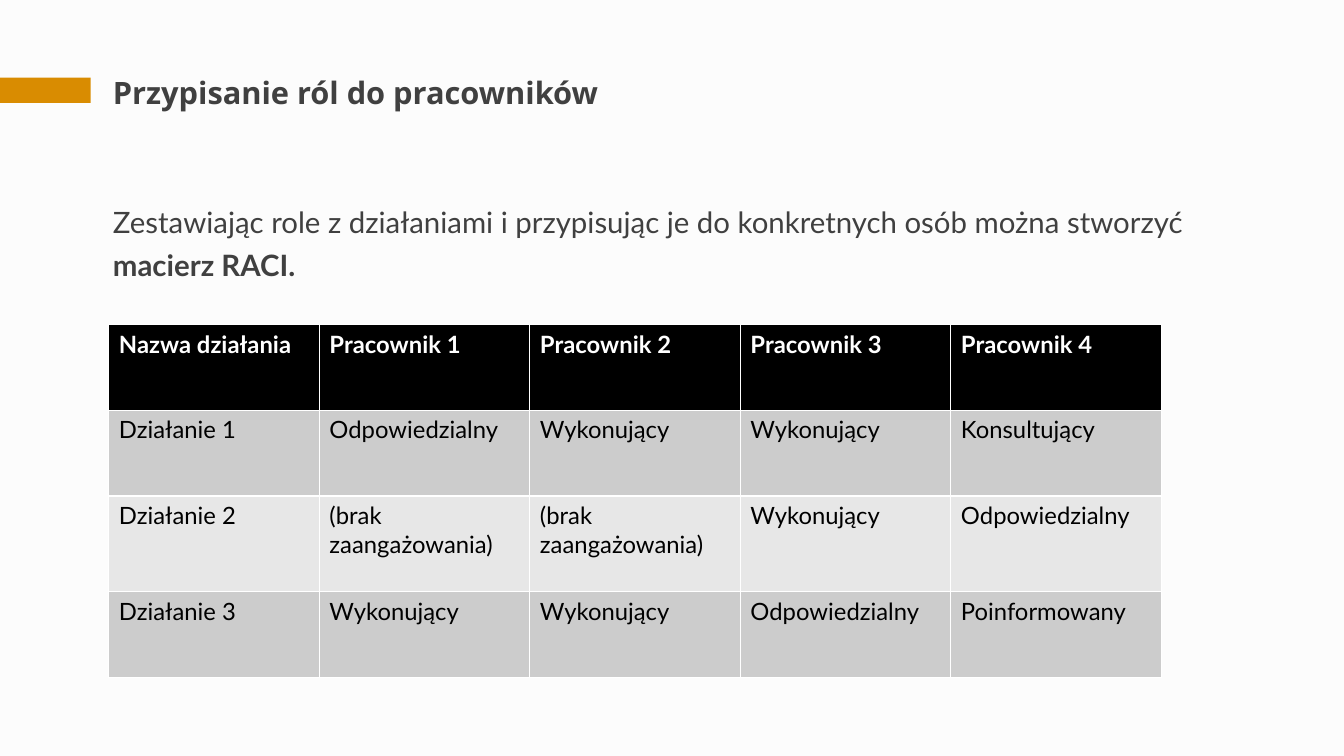
from dataclasses import dataclass

from pptx import Presentation
from pptx.dml.color import RGBColor as Rgb
from pptx.enum.shapes import MSO_SHAPE as Shape
from pptx.enum.text import MSO_ANCHOR as Anchor, MSO_AUTO_SIZE as Auto, PP_ALIGN as Align
from pptx.oxml.ns import qn
from pptx.util import Inches, Pt


@dataclass(frozen=True)
class Theme:
    """Colours, fonts and type sizes of the slide."""
    back: str = "FCFCFC"
    mark: str = "D98C01"
    text: str = "404040"
    dark: str = "000000"
    light: str = "FFFFFF"
    bands: tuple = ("CCCCCC", "E7E7E7")
    head: str = "Open Sans"
    font: str = "Lato"
    title: int = 22
    body: int = 21
    cell: int = 17


THEME = Theme()
WIDE, HIGH = 13.33, 7.5
LEFT, SPAN = 1.02, 11.55
TITLE = "Przypisanie ról do pracowników"
BODY = [
    ("Zestawiając role z działaniami i przypisując je do konkretnych osób można stworzyć ", False),
    ("macierz RACI.", True),
]
DO, LEAD, NONE = "Wykonujący", "Odpowiedzialny", "(brak zaangażowania)"
ROWS = [
    ["Nazwa działania"] + [f"Pracownik {n}" for n in range(1, 5)],
    ["Działanie 1", LEAD, DO, DO, "Konsultujący"],
    ["Działanie 2", NONE, NONE, DO, LEAD],
    ["Działanie 3", DO, DO, LEAD, "Poinformowany"],
]


def apply(item, form):
    """Set attributes of an item from a dict of format values."""
    for name, value in form.items():
        setattr(item, name, value)


def paint(fill, color):
    """Give a fill one solid colour."""
    fill.solid()
    fill.fore_color.rgb = Rgb.from_string(color)


def write(para, text, font, size, color, bold=False):
    """Add one formatted run to a paragraph."""
    run = para.add_run()
    run.text = text
    apply(run.font, {"name": font, "size": Pt(size), "bold": bold})
    run.font.color.rgb = Rgb.from_string(color)


def place(shape, box):
    """Move a shape to a box given in inches."""
    apply(shape, dict(zip(("left", "top", "width", "height"), map(Inches, box))))


def frame(shape, box, lead, inset):
    """Place a text placeholder and return its plain first paragraph."""
    place(shape, box)
    apply(shape.text_frame, {
        "word_wrap": True, "auto_size": Auto.NONE,
        "vertical_anchor": Anchor.TOP, "margin_top": Inches(inset),
    })
    para = shape.text_frame.paragraphs[0]
    apply(para, {"alignment": Align.LEFT, "line_spacing": lead})
    return para


def add_mark(slide, box):
    """Draw the accent bar at the slide edge."""
    bar = slide.shapes.add_shape(Shape.RECTANGLE, *map(Inches, box))
    bar.shadow.inherit = False
    paint(bar.fill, THEME.mark)
    bar.line.fill.background()


def add_title(slide, box):
    """Fill the title placeholder."""
    para = frame(slide.shapes.title, box, 1.14, 0.03)
    write(para, TITLE, THEME.head, THEME.title, THEME.text, True)


def add_body(slide, box):
    """Fill the body placeholder with the lead sentence."""
    para = frame(slide.placeholders[1], box, 1.2, 0.05)
    para.space_before = Pt(18)
    props = para._p.get_or_add_pPr()
    apply_xml = {"marL": "0", "indent": "0"}
    for name, value in apply_xml.items():
        props.set(name, value)
    props.append(props.makeelement(qn("a:buNone"), {}))
    for text, bold in BODY:
        write(para, text, THEME.font, THEME.body, THEME.text, bold)


def add_grid(slide, box):
    """Draw the RACI matrix, with a taller row for wrapped cells."""
    left, top, width, height = box
    shape = slide.shapes.add_table(len(ROWS), len(ROWS[0]), *map(Inches, box))
    grid = shape.table
    extra = 0.1
    base = (height - extra) / len(ROWS)
    for col in grid.columns:
        col.width = Inches(width / len(ROWS[0]))
    for i, row in enumerate(ROWS):
        grid.rows[i].height = Inches(base + extra * (NONE in row))
        top_row = i == 0
        fill = THEME.dark if top_row else THEME.bands[(i - 1) % 2]
        color = THEME.light if top_row else THEME.dark
        for j, text in enumerate(row):
            cell = grid.cell(i, j)
            paint(cell.fill, fill)
            write(cell.text_frame.paragraphs[0], text, THEME.font, THEME.cell, color, top_row)


def main():
    """Build and save the slide."""
    deck = Presentation()
    apply(deck, {"slide_width": Inches(WIDE), "slide_height": Inches(HIGH)})
    slide = deck.slides.add_slide(deck.slide_layouts[1])
    paint(slide.background.fill, THEME.back)
    add_mark(slide, (0, 0.77, 0.9, 0.25))
    add_title(slide, (LEFT, 0.65, SPAN, 0.75))
    add_body(slide, (LEFT, 1.91, SPAN, 4.78))
    add_grid(slide, (1.08, 3.22, 10.44, 3.5))
    deck.save("out.pptx")


if __name__ == "__main__":
    main()
